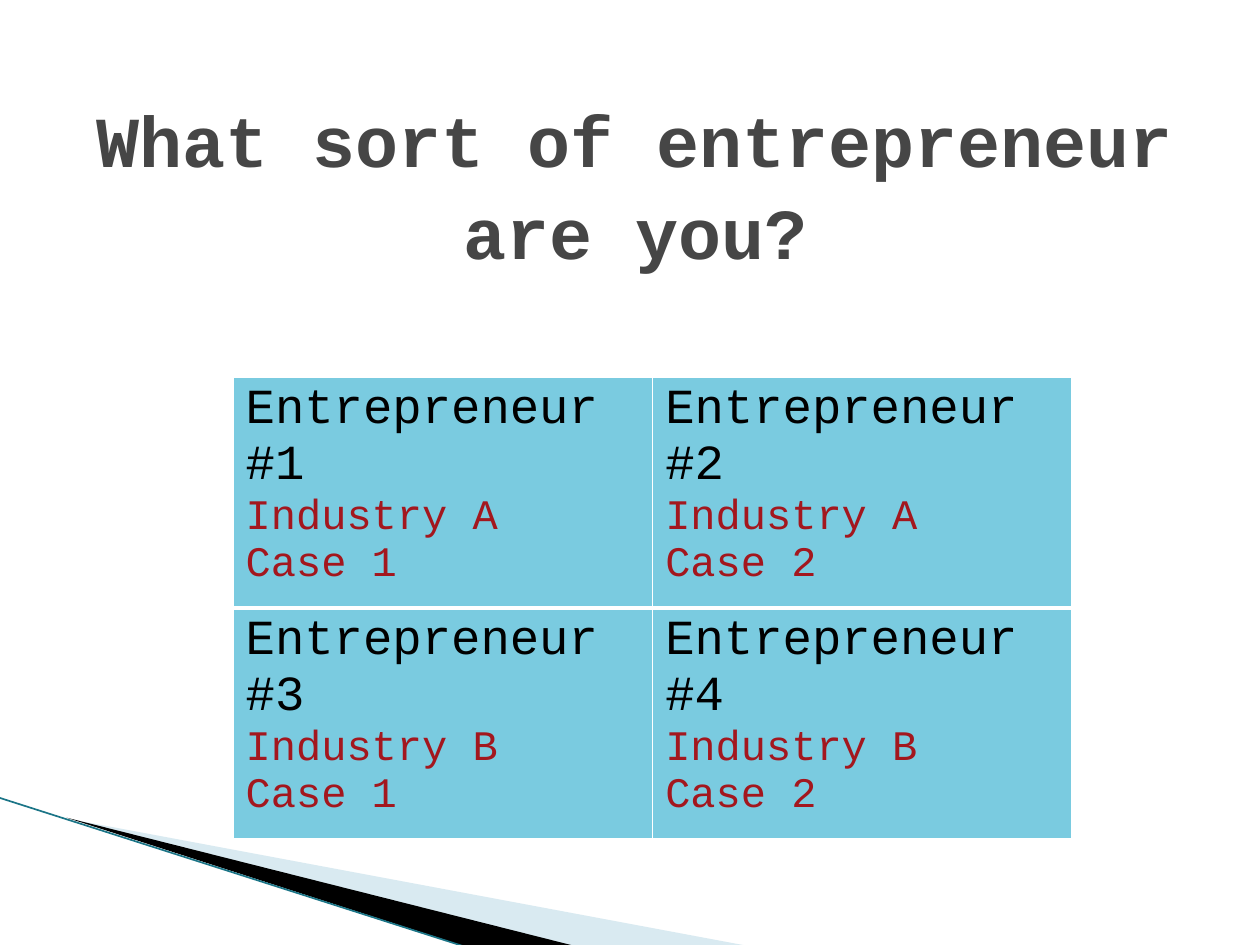
from lxml import etree
from pptx import Presentation
from pptx.dml.color import RGBColor
from pptx.enum.shapes import MSO_CONNECTOR
from pptx.enum.text import MSO_ANCHOR, PP_ALIGN
from pptx.oxml import parse_xml
from pptx.oxml.ns import nsdecls, qn
from pptx.util import Inches, Pt

CENTER, LEFT = PP_ALIGN.CENTER, PP_ALIGN.LEFT
MIDDLE = MSO_ANCHOR.MIDDLE
STRAIGHT = MSO_CONNECTOR.STRAIGHT
FONT = "Courier New"
COLORS = {
    "title": "464646",
    "name": "000000",
    "detail": "A3171E",
    "cell": "7ACBE0",
    "border": "FFFFFF",
    "pale_wedge": "A0CBDC",
    "dark_wedge": "000000",
    "edge": "1B7587",
}
ENTREPRENEURS = [
    [("Entrepreneur #1", "Industry A", "Case 1"),
     ("Entrepreneur #2", "Industry A", "Case 2")],
    [("Entrepreneur #3", "Industry B", "Case 1"),
     ("Entrepreneur #4", "Industry B", "Case 2")],
]


def rgb(name):
    return RGBColor.from_string(COLORS[name])


def write(paragraph, text, size, color, bold=False, align=LEFT, spacing=None):
    paragraph.alignment = align
    if spacing:
        paragraph.line_spacing = spacing
    run = paragraph.add_run()
    run.text = text
    run.font.name = FONT
    run.font.size = Pt(size)
    run.font.bold = bold
    run.font.color.rgb = rgb(color)


def add_wedge(slide, points, color, opacity=None):
    """Draw a filled polygon; opacity is a percentage."""
    corners = [(Inches(x), Inches(y)) for x, y in points]
    builder = slide.shapes.build_freeform(*corners[0])
    builder.add_line_segments(corners[1:], close=True)
    wedge = builder.convert_to_shape()
    wedge.shadow.inherit = False
    wedge.fill.solid()
    wedge.fill.fore_color.rgb = rgb(color)
    wedge.line.fill.background()
    if opacity is not None:
        fill_color = wedge._element.spPr.find(qn("a:solidFill"))[0]
        etree.SubElement(fill_color, qn("a:alpha"), val=str(opacity * 1000))


def add_edge(slide, start, end, color, width):
    edge = slide.shapes.add_connector(
        STRAIGHT, *(Inches(value) for value in start + end))
    edge.line.color.rgb = rgb(color)
    edge.line.width = Pt(width)
    etree.SubElement(edge._element.spPr, qn("a:effectLst"))


def add_title(slide, text):
    box = slide.shapes.add_textbox(
        Inches(0.28), Inches(0.44), Inches(9.53), Inches(2))
    frame = box.text_frame
    frame.word_wrap = True
    frame.vertical_anchor = MIDDLE
    write(frame.paragraphs[0], text, size=41, color="title", bold=True,
          align=CENTER, spacing=1.07)


def set_borders(cell, **widths):
    """Set cell borders by side (L, R, T, B), in points."""
    properties = cell._tc.get_or_add_tcPr()
    for index, side in enumerate("LRTB"):
        properties.insert(index, parse_xml(
            f'<a:ln{side} {nsdecls("a")} w="{Pt(widths[side])}"><a:solidFill>'
            f'<a:srgbClr val="{COLORS["border"]}"/></a:solidFill></a:ln{side}>'))


def fill_cell(cell, lines):
    cell.fill.solid()
    cell.fill.fore_color.rgb = rgb("cell")
    frame = cell.text_frame
    for index, line in enumerate(lines):
        paragraph = frame.add_paragraph() if index else frame.paragraphs[0]
        size, color = (24, "detail") if index else (28, "name")
        write(paragraph, line, size=size, color=color)


def add_entrepreneur_table(slide, rows):
    row_height, column_width = 1.73, 3.33
    table = slide.shapes.add_table(
        len(rows), len(rows[0]), Inches(1.85), Inches(2.99),
        Inches(column_width * len(rows[0])),
        Inches(row_height * len(rows))).table
    table.first_row = table.horz_banding = False
    for r, row in enumerate(rows):
        for c, lines in enumerate(row):
            cell = table.cell(r, c)
            fill_cell(cell, lines)
            set_borders(cell, L=1, R=1, T=3 if r else 1, B=1 if r else 3)


def main():
    presentation = Presentation()
    presentation.slide_width = Inches(10)
    presentation.slide_height = Inches(7.5)
    slide = presentation.slides.add_slide(presentation.slide_layouts[6])
    add_wedge(slide, [(0.55, 6.5), (5.95, 7.51), (4.56, 7.51)],
              "pale_wedge", opacity=40)
    add_wedge(slide, [(0.53, 6.49), (4.57, 7.51), (3.72, 7.52)], "dark_wedge")
    add_edge(slide, (-0.01, 6.33), (3.71, 7.52), "edge", 0.95)
    add_title(slide, "What sort of entrepreneur are you?")
    add_entrepreneur_table(slide, ENTREPRENEURS)
    presentation.save("out.pptx")


if __name__ == "__main__":
    main()
